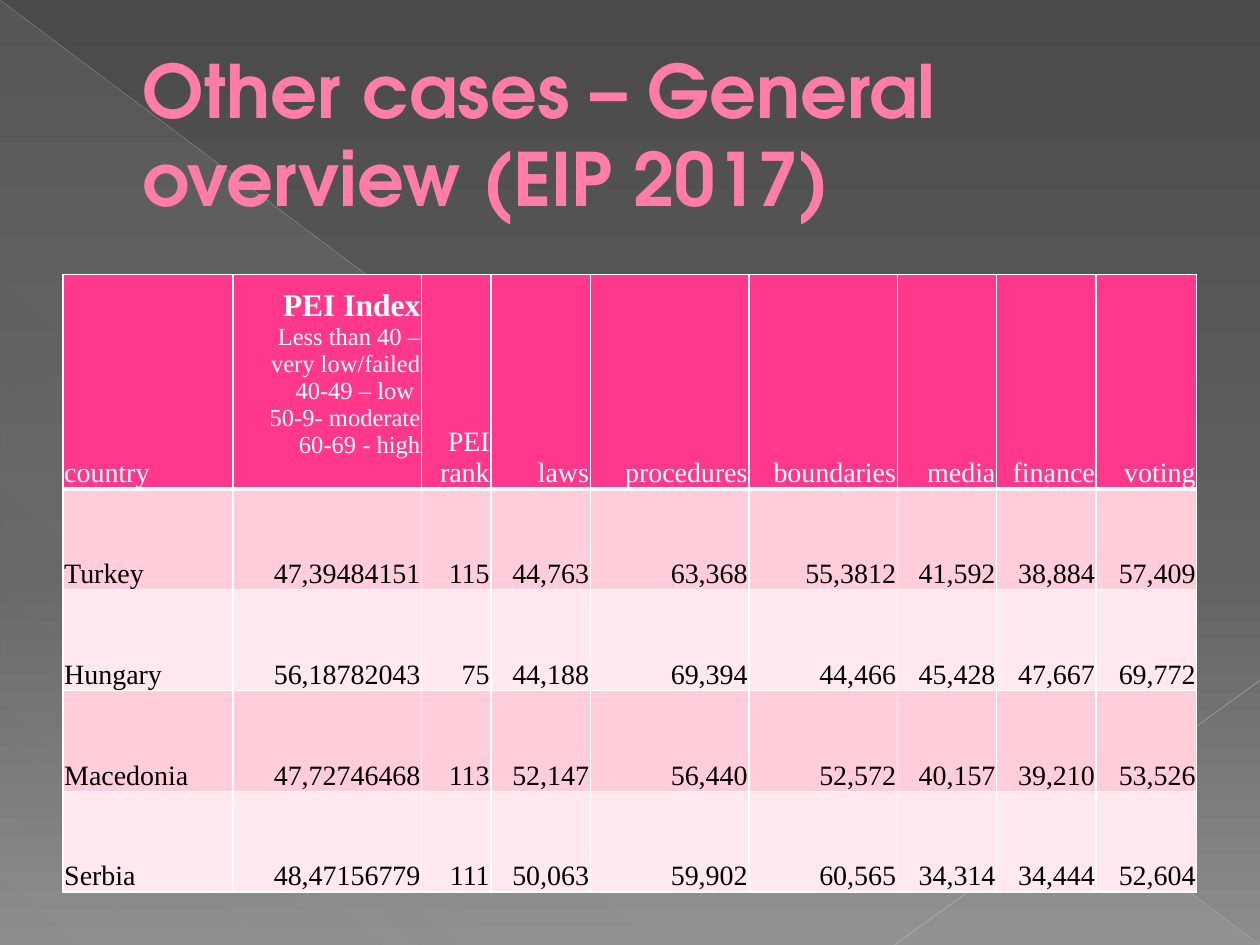
from lxml import etree
from pptx import Presentation
from pptx.dml.color import RGBColor
from pptx.enum.shapes import MSO_CONNECTOR, MSO_SHAPE
from pptx.enum.text import MSO_ANCHOR, MSO_AUTO_SIZE, PP_ALIGN
from pptx.oxml.ns import qn
from pptx.util import Inches, Pt

STRAIGHT, RIGHT_TRIANGLE = MSO_CONNECTOR.STRAIGHT, MSO_SHAPE.RIGHT_TRIANGLE
LEFT, RIGHT = PP_ALIGN.LEFT, PP_ALIGN.RIGHT
MIDDLE, BOTTOM = MSO_ANCHOR.MIDDLE, MSO_ANCHOR.BOTTOM

WHITE = RGBColor(0xFF, 0xFF, 0xFF)
BLACK = RGBColor(0x00, 0x00, 0x00)
TITLE_PINK = RGBColor(0xFF, 0x7D, 0xA7)
TITLE_OUTLINE = RGBColor(0xB1, 0x27, 0x61)
HEADER_PINK = RGBColor(0xFF, 0x38, 0x8C)
BANDS = (RGBColor(0xFF, 0xCE, 0xDA), RGBColor(0xFF, 0xE8, 0xEE))
GREY_DARK = RGBColor(0x4A, 0x4A, 0x4A)
GREY_MID = RGBColor(0x62, 0x62, 0x62)
GREY_LIGHT = RGBColor(0x8C, 0x8C, 0x8C)
SHEEN = RGBColor(0xD2, 0xD2, 0xD2)
LONG_LINE = RGBColor(0xBF, 0xBF, 0xBF)
SHORT_LINE = RGBColor(0xC6, 0xC6, 0xC6)

TITLE_FONT, TABLE_FONT = "TeX Gyre Adventor", "Times New Roman"

COLUMN_WIDTHS = (1.35, 1.5, 0.55, 0.79, 1.26, 1.18, 0.79, 0.79, 0.8)
ROW_HEIGHTS = (1.7, 0.8, 0.8, 0.8, 0.8)
INDEX_COLUMN = 1
INDEX_SCALE = ("Less than 40 – very low/failed", "40-49 – low ",
               "50-9- moderate", "60-69 - high")
HEADERS = ("country", "PEI Index", "PEI rank", "laws", "procedures",
           "boundaries", "media", "finance", "voting")
COUNTRIES = (
    ("Turkey", "47,39484151", "115", "44,763", "63,368", "55,3812",
     "41,592", "38,884", "57,409"),
    ("Hungary", "56,18782043", "75", "44,188", "69,394", "44,466",
     "45,428", "47,667", "69,772"),
    ("Macedonia", "47,72746468", "113", "52,147", "56,440", "52,572",
     "40,157", "39,210", "53,526"),
    ("Serbia", "48,47156779", "111", "50,063", "59,902", "60,565",
     "34,314", "34,444", "52,604"),
)


def add_color(parent, color, opacity=100):
    element = etree.SubElement(parent, qn("a:srgbClr"), val=str(color))
    if opacity < 100:
        etree.SubElement(element, qn("a:alpha"), val=str(opacity * 1000))


def set_gradient(fill, owner, stops, angle):
    """Give a fill its stops (position, colour, opacity), angle clockwise."""
    fill.gradient()
    fill.gradient_angle = 360 - angle
    stop_list = next(owner.iter(qn("a:gsLst")))
    for old_stop in list(stop_list):
        stop_list.remove(old_stop)
    for position, color, opacity in stops:
        stop = etree.SubElement(stop_list, qn("a:gs"), pos=str(position * 1000))
        add_color(stop, color, opacity)


def add_line(slide, start, end, color, width, opacity):
    line = slide.shapes.add_connector(
        STRAIGHT, *(Inches(value) for value in (*start, *end)))
    line.line.color.rgb = color
    line.line.width = Pt(width)
    color_element = next(line.element.iter(qn("a:srgbClr")))
    etree.SubElement(color_element, qn("a:alpha"), val=str(opacity * 1000))
    etree.SubElement(line.element.spPr, qn("a:effectLst"))


def draw_backdrop(slide, width, height):
    set_gradient(slide.background.fill, slide.element,
                 ((0, GREY_DARK, 100), (60, GREY_MID, 100),
                  (100, GREY_LIGHT, 100)), 90)
    triangle = slide.shapes.add_shape(
        RIGHT_TRIANGLE, 0, 0, Inches(width), Inches(height))
    triangle.shadow.inherit = False
    triangle.line.fill.background()
    set_gradient(triangle.fill, triangle.element,
                 ((0, SHEEN, 10), (70, SHEEN, 8), (100, SHEEN, 1)), 133)
    add_line(slide, (0, 0), (width, height), LONG_LINE, 0.39, 35)
    add_line(slide, (width, height * 0.72), (width * 0.71, height),
             SHORT_LINE, 0.47, 45)


def place_title(slide, left, top, width, height):
    title = slide.shapes.title
    slide.shapes.element.append(title.element)  # in front of the backdrop
    title.left, title.top = Inches(left), Inches(top)
    title.width, title.height = Inches(width), Inches(height)
    frame = title.text_frame
    frame.text = "Other cases – General overview (EIP 2017)"
    frame.word_wrap = True
    frame.auto_size = MSO_AUTO_SIZE.NONE
    frame.vertical_anchor = MIDDLE
    frame.margin_left = Inches(0.63)
    paragraph = frame.paragraphs[0]
    paragraph.alignment = LEFT
    font = paragraph.runs[0].font
    font.name, font.size, font.bold = TITLE_FONT, Pt(42), True
    font.color.rgb = TITLE_PINK
    # Thin outline around the letters
    properties = paragraph.runs[0].font._element
    outline = etree.Element(qn("a:ln"), w=str(Pt(0.5)))
    add_color(etree.SubElement(outline, qn("a:solidFill")), TITLE_OUTLINE)
    properties.insert(0, outline)


def set_borders(cell, top, bottom):
    properties = cell._tc.get_or_add_tcPr()
    widths = (("a:lnL", 1), ("a:lnR", 1), ("a:lnT", top), ("a:lnB", bottom))
    for index, (tag, width) in enumerate(widths):
        border = etree.Element(qn(tag), w=str(Pt(width)))
        add_color(etree.SubElement(border, qn("a:solidFill")), WHITE)
        properties.insert(index, border)


def format_paragraph(paragraph, alignment, color, size=16, bold=False):
    paragraph.alignment = alignment
    font = paragraph.font
    font.name, font.size, font.bold = TABLE_FONT, Pt(size), bold
    font.color.rgb = color


def fill_index_header(cell):
    """The index name with its scale beneath, raised above the cell's foot."""
    cell.margin_bottom = Inches(0.24)
    frame = cell.text_frame
    format_paragraph(frame.paragraphs[0], RIGHT, WHITE, 18, True)
    for text in INDEX_SCALE:
        paragraph = frame.add_paragraph()
        paragraph.text = text
        format_paragraph(paragraph, RIGHT, WHITE, 14)


def place_table(slide, left, top, width, height):
    rows = (HEADERS, *COUNTRIES)
    table = slide.shapes.add_table(
        len(rows), len(HEADERS), Inches(left), Inches(top),
        Inches(width), Inches(height)).table
    for column, share in zip(table.columns, COLUMN_WIDTHS):
        column.width = Inches(width * share / sum(COLUMN_WIDTHS))
    for row, share in zip(table.rows, ROW_HEIGHTS):
        row.height = Inches(height * share / sum(ROW_HEIGHTS))

    for row_index, texts in enumerate(rows):
        is_header = row_index == 0
        fill_color = HEADER_PINK if is_header else BANDS[(row_index - 1) % 2]
        for column_index, text in enumerate(texts):
            cell = table.cell(row_index, column_index)
            cell.text = text
            cell.vertical_anchor = BOTTOM
            cell.margin_left = cell.margin_right = cell.margin_top = Inches(0.01)
            cell.margin_bottom = 0
            cell.fill.solid()
            cell.fill.fore_color.rgb = fill_color
            set_borders(cell, 3 if row_index == 1 else 1, 3 if is_header else 1)
            format_paragraph(cell.text_frame.paragraphs[0],
                             RIGHT if column_index else LEFT,
                             WHITE if is_header else BLACK)
    fill_index_header(table.cell(0, INDEX_COLUMN))


def main():
    presentation = Presentation()
    width, height = 10, 7.5
    presentation.slide_width = Inches(width)
    presentation.slide_height = Inches(height)
    slide = presentation.slides.add_slide(presentation.slide_layouts[5])
    draw_backdrop(slide, width, height)
    margin = width * 0.05
    place_title(slide, margin, 0.29, width - 2 * margin, 1.53)
    place_table(slide, margin, 2.18, width - 2 * margin, 4.9)
    presentation.save("out.pptx")


if __name__ == "__main__":
    main()
